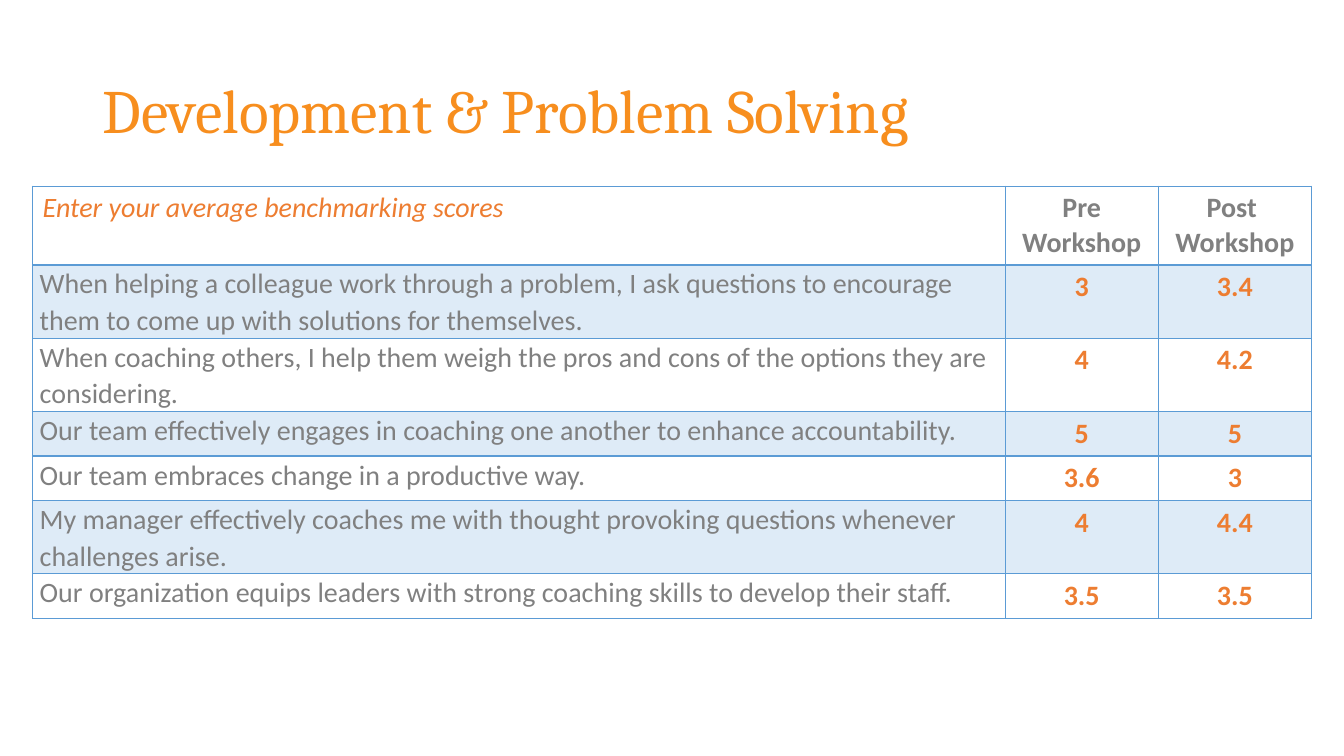
from lxml.etree import SubElement
from pptx import Presentation
from pptx.dml.color import RGBColor
from pptx.enum.text import MSO_ANCHOR, PP_ALIGN
from pptx.oxml.ns import qn
from pptx.util import Cm, Pt

TITLE = "Development & Problem Solving"
HEAD = ("Enter your average benchmarking scores", "Pre Workshop", "Post \nWorkshop")
SCORES = [
    ("When helping a colleague work through a problem, I ask questions to encourage "
     "them to come up with solutions for themselves.", "3", "3.4"),
    ("When coaching others, I help them weigh the pros and cons of the options they "
     "are considering.", "4", "4.2"),
    ("Our team effectively engages in coaching one another to enhance accountability.",
     "5", "5"),
    ("Our team embraces change in a productive way.", "3.6", "3"),
    ("My manager effectively coaches me with thought provoking questions whenever "
     "challenges arise.", "4", "4.4"),
    ("Our organization equips leaders with strong coaching skills to develop their "
     "staff.", "3.5", "3.5"),
]
WIDTHS = (24.51, 3.86, 3.86)
ROW = 1.04
EDGE, BAND = "5B9BD5", "DEEBF7"
ORANGE, GREY = "ED7D31", "808080"

BODY = {"name": "Calibri", "size": Pt(20), "bold": False, "italic": False}
HINT = {**BODY, "italic": True, "color": ORANGE}
LABEL = {**BODY, "bold": True, "color": GREY}
ITEM = {**BODY, "color": GREY}
SCORE = {**BODY, "bold": True, "color": ORANGE}
TOP = {"name": "Cambria", "size": Pt(44), "color": "F78E1E"}
INSET = {"margin_left": Cm(0.18), "margin_right": Cm(0.18),
         "margin_top": 0, "margin_bottom": 0}


def paint(color, code):
    color.rgb = RGBColor.from_string(code)


def apply(thing, look):
    for key, value in look.items():
        if key == "color":
            paint(thing.color, value)
        else:
            setattr(thing, key, value)


def write(frame, text, look, align, space):
    frame.text = text
    for para in frame.paragraphs:
        para.alignment = align
        para.line_spacing = space
        for run in para.runs:
            apply(run.font, look)


def border(cell, base):
    props = cell._tc.get_or_add_tcPr()
    for side in "LRTB":
        wide = base if side == "B" else 1
        line = SubElement(props, qn(f"a:ln{side}"), w=str(Pt(wide)))
        fill = SubElement(line, qn("a:solidFill"))
        SubElement(fill, qn("a:srgbClr"), val=EDGE)


def style(row, col):
    if row == 0:
        return LABEL if col else HINT
    return SCORE if col else ITEM


def main():
    deck = Presentation()
    deck.slide_width, deck.slide_height = Cm(33.87), Cm(19.05)
    slide = deck.slides.add_slide(deck.slide_layouts[5])

    title = slide.shapes.title
    apply(title, {"left": Cm(2.33), "top": Cm(1.01),
                  "width": Cm(29.21), "height": Cm(3.68)})
    title.text_frame.vertical_anchor = MSO_ANCHOR.MIDDLE
    write(title.text_frame, TITLE, TOP, PP_ALIGN.LEFT, 0.9)

    rows = [HEAD, *SCORES]
    grid = slide.shapes.add_table(len(rows), len(WIDTHS), Cm(0.82), Cm(4.69),
                                  Cm(sum(WIDTHS)), Cm(ROW * len(rows))).table
    apply(grid, {"first_row": False, "horz_banding": False})
    for col, wide in zip(grid.columns, WIDTHS):
        col.width = Cm(wide)

    for r, texts in enumerate(rows):
        for c, text in enumerate(texts):
            cell = grid.cell(r, c)
            item = r > 0 and c == 0
            if item:
                apply(cell, INSET)
            align = PP_ALIGN.CENTER if c else PP_ALIGN.LEFT
            write(cell.text_frame, text, style(r, c), align, 1.07 if item else 1.0)
            border(cell, 1 if r else 2)
            if r % 2:
                cell.fill.solid()
                paint(cell.fill.fore_color, BAND)
            else:
                cell.fill.background()

    deck.save("out.pptx")


if __name__ == "__main__":
    main()
